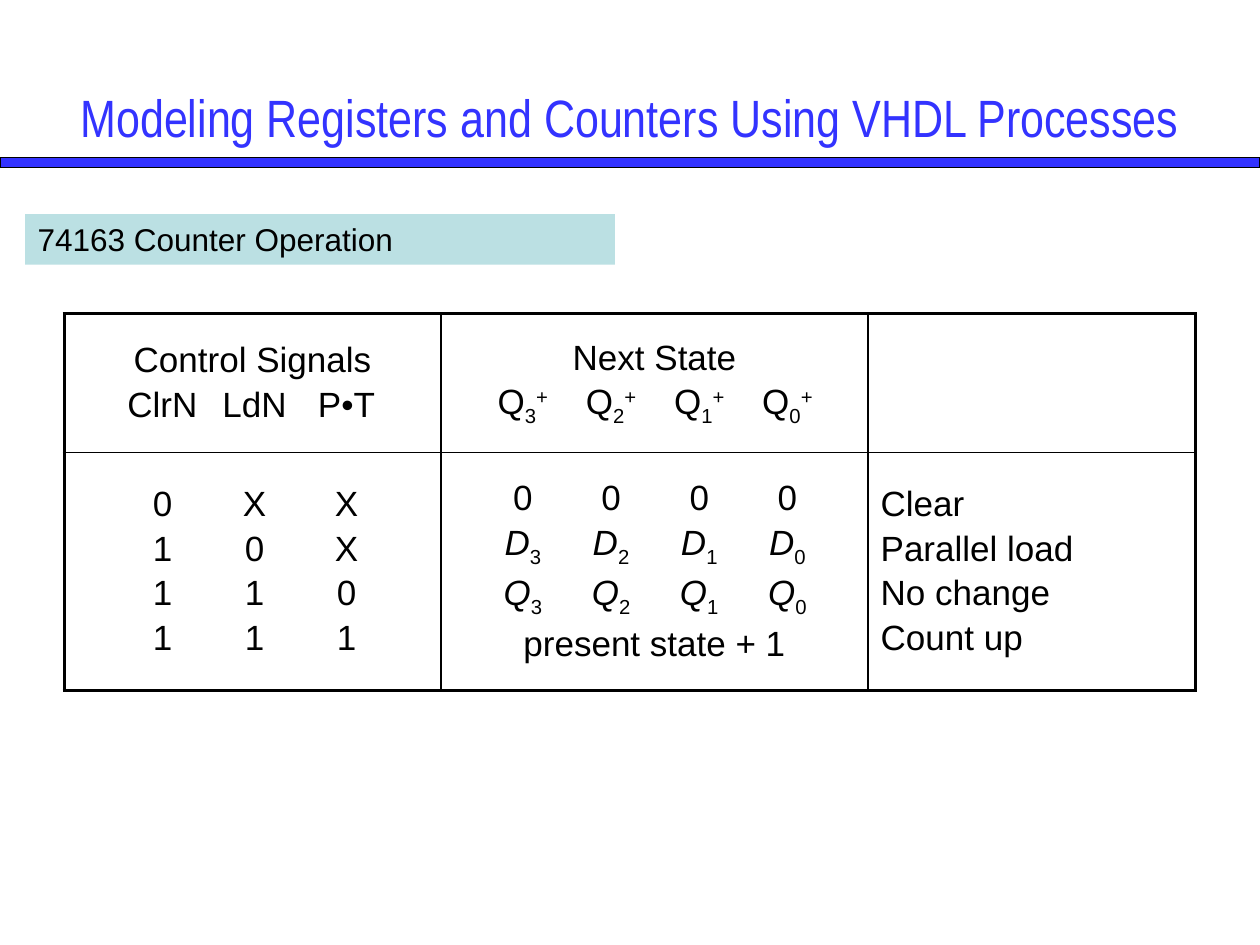
from dataclasses import dataclass

from lxml.etree import SubElement
from pptx import Presentation
from pptx.dml.color import RGBColor as Color
from pptx.enum.shapes import MSO_SHAPE as Shape
from pptx.enum.text import MSO_ANCHOR as Anchor, PP_ALIGN as Align
from pptx.oxml.ns import qn
from pptx.util import Inches, Pt


@dataclass(frozen=True)
class Theme:
    blue: str = "3333FF"
    teal: str = "BBE0E3"
    black: str = "000000"
    title_font: str = "Arial Narrow"
    body_font: str = "Arial"
    title_size: int = 30
    label_size: int = 18
    table_size: int = 20
    line_gap: float = 3.3
    thin: float = 1
    thick: float = 2.25


THEME = Theme()
SUB, SUPER = -25000, 30000


def state_bits(letter, italic=True, after=()):
    return [[(letter, {"italic": italic}), (bit, {"base": SUB}), *after] for bit in "3210"]


TITLE = "Modeling Registers and Counters Using VHDL Processes"
LABEL = "74163 Counter Operation"
CELLS = [
    [
        ["Control Signals", ["ClrN", "LdN", "P•T"]],
        ["Next State", state_bits("Q", italic=False, after=[("+", {"base": SUPER})])],
        [],
    ],
    [
        [list("0XX"), list("10X"), list("110"), list("111")],
        [list("0000"), state_bits("D"), state_bits("Q"), "present state + 1"],
        ["Clear", "Parallel load", "No change", "Count up"],
    ],
]
COLUMN_WIDTHS = (2.99, 3.39, 2.6)
ROW_HEIGHTS = (1.1, 1.89)
COLUMN_ALIGNS = (Align.CENTER, Align.CENTER, Align.LEFT)
COLUMN_STOPS = (
    [0.68 + 0.73 * index for index in range(3)],
    [0.55 + 0.7 * index for index in range(4)],
    [],
)


def write(paragraph, content, size=THEME.table_size, font=THEME.body_font,
          color=THEME.black, align=Align.LEFT, before=0, stops=()):
    paragraph.space_before = Pt(before)
    if isinstance(content, str):
        paragraph.alignment = align
        runs = [(content, {})]
    else:
        paragraph.alignment = Align.LEFT
        tabs = SubElement(paragraph._p.get_or_add_pPr(), qn("a:tabLst"))
        runs = []
        for entry, stop in zip(content, stops):
            SubElement(tabs, qn("a:tab"), pos=str(Inches(stop)), algn="ctr")
            runs.append(("\t", {}))
            runs.extend([(entry, {})] if isinstance(entry, str) else entry)
    for text, style in runs:
        run = paragraph.add_run()
        run.text = text
        run.font.name, run.font.size = font, Pt(size)
        run.font.color.rgb = Color.from_string(color)
        run.font.italic = style.get("italic", False)
        if "base" in style:
            run.font._element.set("baseline", str(style["base"]))


def add_bar(slide, box, fill, line=None):
    shape = slide.shapes.add_shape(Shape.RECTANGLE, *map(Inches, box))
    shape.shadow.inherit = False
    shape.fill.solid()
    shape.fill.fore_color.rgb = Color.from_string(fill)
    if line:
        shape.line.color.rgb = Color.from_string(line)
        shape.line.width = Pt(0.75)
    else:
        shape.line.fill.background()
    return shape


def set_borders(cell, outer_sides):
    properties = cell._tc.get_or_add_tcPr()
    for side, is_outer in outer_sides.items():
        width = THEME.thick if is_outer else THEME.thin
        line = SubElement(properties, qn(f"a:ln{side}"), w=str(Pt(width)))
        fill = SubElement(line, qn("a:solidFill"))
        SubElement(fill, qn("a:srgbClr"), val=THEME.black)


def add_state_table(slide, left, top):
    rows, columns = len(ROW_HEIGHTS), len(COLUMN_WIDTHS)
    box = (left, top, sum(COLUMN_WIDTHS), sum(ROW_HEIGHTS))
    table = slide.shapes.add_table(rows, columns, *map(Inches, box)).table
    table.first_row = table.horz_banding = False
    for column, width in zip(table.columns, COLUMN_WIDTHS):
        column.width = Inches(width)
    for row, height in zip(table.rows, ROW_HEIGHTS):
        row.height = Inches(height)
    for r, row in enumerate(CELLS):
        for c, lines in enumerate(row):
            cell = table.cell(r, c)
            cell.vertical_anchor = Anchor.MIDDLE
            set_borders(cell, {"L": c == 0, "R": c == columns - 1,
                               "T": r == 0, "B": r == rows - 1})
            cell.fill.background()
            for index, content in enumerate(lines):
                frame = cell.text_frame
                paragraph = frame.add_paragraph() if index else frame.paragraphs[0]
                write(paragraph, content, align=COLUMN_ALIGNS[c],
                      before=THEME.line_gap, stops=COLUMN_STOPS[c])


def main():
    presentation = Presentation()
    presentation.slide_width, presentation.slide_height = Inches(10), Inches(7.5)
    slide = presentation.slides.add_slide(presentation.slide_layouts[5])

    title = slide.shapes.title
    title.left, title.top, title.width, title.height = map(Inches, (0.5, 0.3, 9, 1.25))
    title.text_frame.vertical_anchor = Anchor.MIDDLE
    write(title.text_frame.paragraphs[0], TITLE, size=THEME.title_size,
          font=THEME.title_font, color=THEME.blue, align=Align.CENTER)

    add_bar(slide, (0, 1.25, 10, 0.08), THEME.blue, line=THEME.black)
    label = add_bar(slide, (0.2, 1.7, 4.68, 0.4), THEME.teal)
    label.text_frame.vertical_anchor = Anchor.TOP
    write(label.text_frame.paragraphs[0], LABEL, size=THEME.label_size)

    add_state_table(slide, 0.51, 2.49)
    presentation.save("out.pptx")


if __name__ == "__main__":
    main()
